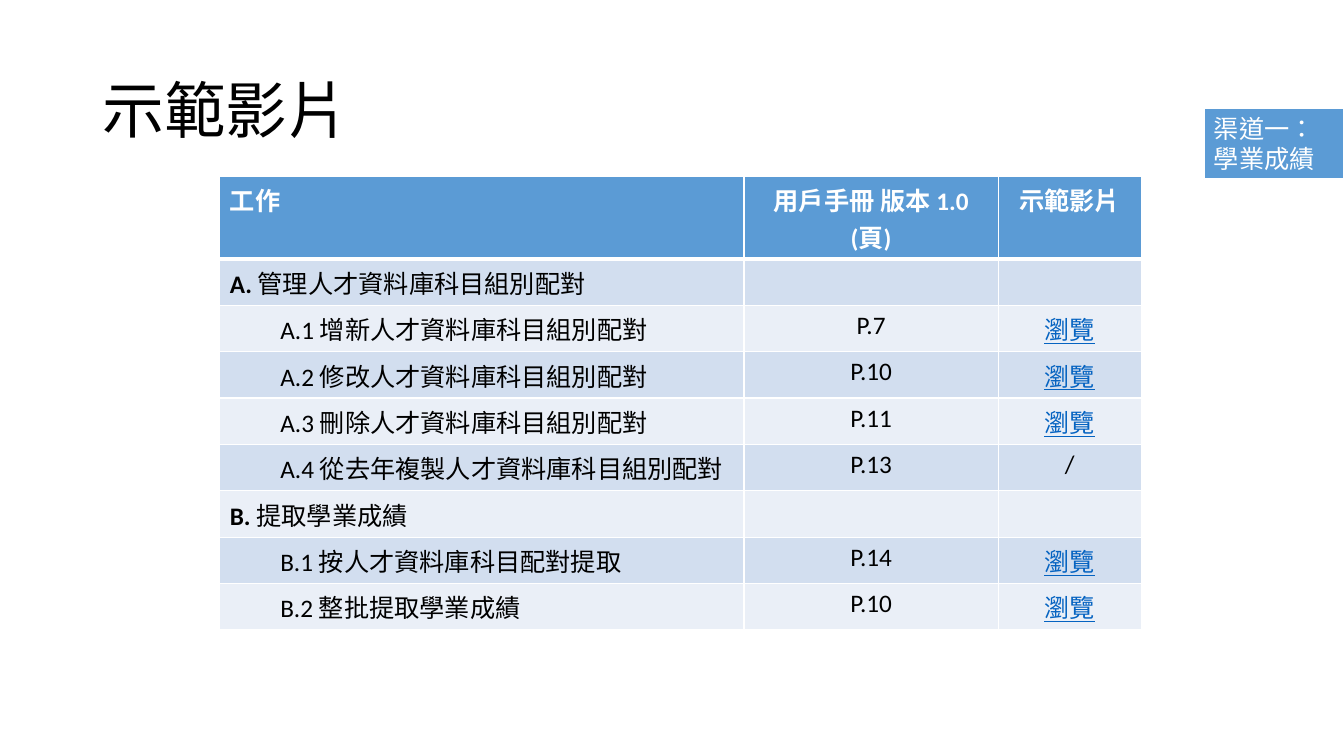
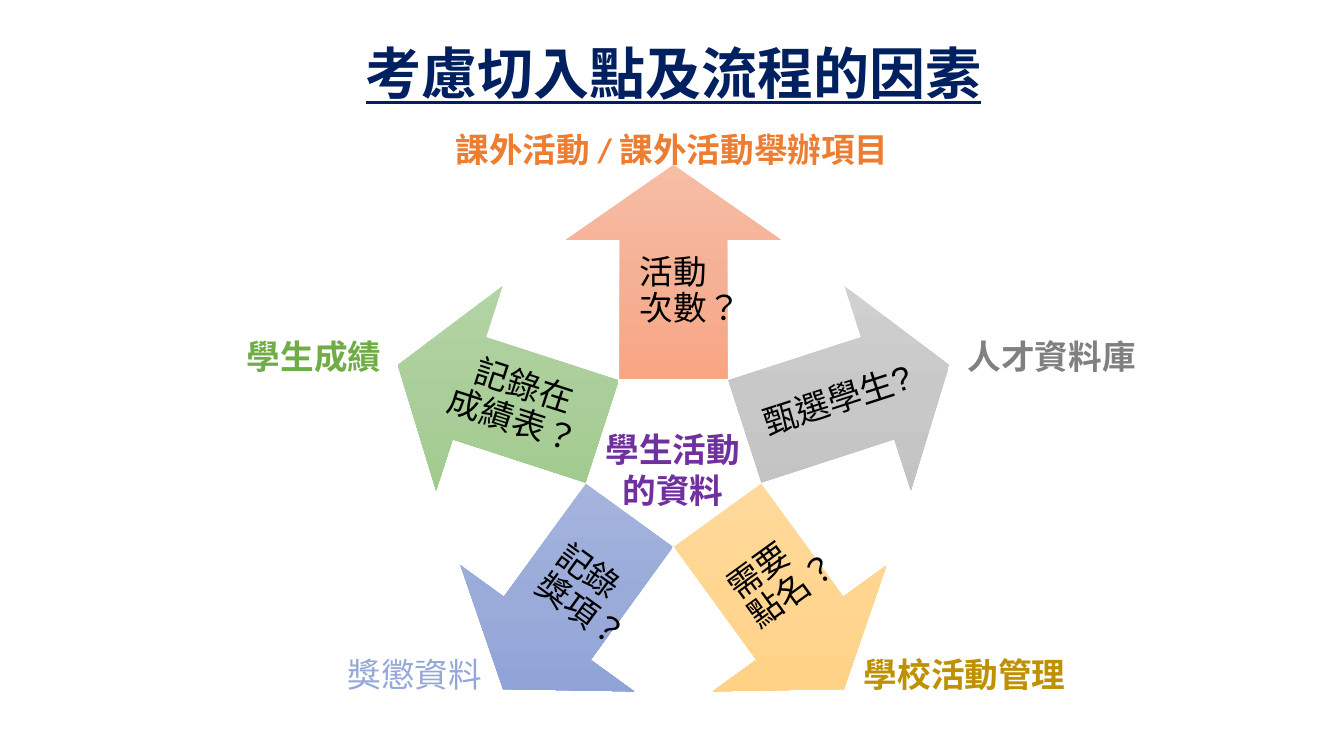
from math import cos, radians, sin

from lxml.etree import SubElement
from pptx import Presentation
from pptx.dml.color import RGBColor
from pptx.enum.lang import MSO_LANGUAGE_ID
from pptx.enum.shapes import MSO_SHAPE
from pptx.enum.text import MSO_ANCHOR, PP_ALIGN
from pptx.oxml.ns import qn
from pptx.util import Inches, Pt

BLUE = RGBColor(0x5B, 0x9B, 0xD5)
BAND_DARK = RGBColor(0xD2, 0xDE, 0xEF)
BAND_LIGHT = RGBColor(0xEA, 0xEF, 0xF7)
LINK = RGBColor(0x05, 0x63, 0xC1)
NAVY = RGBColor(0x00, 0x20, 0x60)
PURPLE = RGBColor(0x70, 0x30, 0xA0)
ORANGE = RGBColor(0xED, 0x7D, 0x31)
GRAY = RGBColor(0x80, 0x80, 0x80)
GOLD = RGBColor(0xBF, 0x90, 0x00)
PERIWINKLE = RGBColor(0x95, 0xA8, 0xD9)
GREEN = RGBColor(0x70, 0xAD, 0x47)
BLACK = RGBColor(0, 0, 0)
WHITE = RGBColor(0xFF, 0xFF, 0xFF)


def set_text(tf, text, size, color=BLACK, bold=False, align=PP_ALIGN.LEFT,
             name="Calibri", underline=False, spacing=None):
    tf.word_wrap = True
    tf.text = text
    for p in tf.paragraphs:
        p.alignment = align
        p.line_spacing = spacing
        for r in p.runs:
            r.font.size = Pt(size)
            r.font.name = name
            r.font.bold = bold
            r.font.underline = underline
            r.font.color.rgb = color
            r.font.language_id = MSO_LANGUAGE_ID.TRADITIONAL_CHINESE


def add_text(s, left, top, width, height, text, size, anchor=MSO_ANCHOR.TOP, **style):
    sp = s.shapes.add_textbox(Inches(left), Inches(top), Inches(width), Inches(height))
    sp.text_frame.vertical_anchor = anchor
    set_text(sp.text_frame, text, size, **style)
    return sp


prs = Presentation()
prs.slide_width = Inches(13.33)
prs.slide_height = Inches(7.5)
blank = prs.slide_layouts[6]

# Slide 1: demonstration videos
s = prs.slides.add_slide(blank)
add_text(s, 0.92, 0.4, 11.5, 1.45, "示範影片", 44, MSO_ANCHOR.MIDDLE, spacing=0.9)

HEADER_HEIGHT, ROW_HEIGHT = 0.82, 0.46
rows = [
    ("工作", "用戶手冊 版本 1.0\n(頁)", "示範影片"),
    ("A. 管理人才資料庫科目組別配對", "", ""),
    ("A.1 增新人才資料庫科目組別配對", "P.7", "瀏覽"),
    ("A.2 修改人才資料庫科目組別配對", "P.10", "瀏覽"),
    ("A.3 刪除人才資料庫科目組別配對", "P.11", "瀏覽"),
    ("A.4 從去年複製人才資料庫科目組別配對", "P.13", "/"),
    ("B. 提取學業成績", "", ""),
    ("B.1 按人才資料庫科目配對提取", "P.14", "瀏覽"),
    ("B.2 整批提取學業成績", "P.10", "瀏覽"),
]
table = s.shapes.add_table(len(rows), 3, Inches(2.18), Inches(1.75), Inches(9.14),
                           Inches(HEADER_HEIGHT + ROW_HEIGHT * (len(rows) - 1))).table
for col, width in zip(table.columns, (5.2, 2.52, 1.42)):
    col.width = Inches(width)

for i, row in enumerate(rows):
    header = i == 0
    table.rows[i].height = Inches(HEADER_HEIGHT if header else ROW_HEIGHT)
    for j, text in enumerate(row):
        cell = table.cell(i, j)
        cell.fill.solid()
        cell.fill.fore_color.rgb = BLUE if header else BAND_DARK if i % 2 else BAND_LIGHT
        link = text == "瀏覽"
        set_text(cell.text_frame, text, 18, bold=header, underline=link,
                 color=WHITE if header else LINK if link else BLACK,
                 align=PP_ALIGN.CENTER if j else PP_ALIGN.LEFT)

        # White borders, heavier under the header
        tc_pr = cell._tc.get_or_add_tcPr()
        for k, tag in enumerate(("a:lnL", "a:lnR", "a:lnT", "a:lnB")):
            heavy = (i, tag) in ((0, "a:lnB"), (1, "a:lnT"))
            ln = tc_pr.makeelement(qn(tag), {"w": str(Pt(3 if heavy else 1))})
            SubElement(SubElement(ln, qn("a:solidFill")), qn("a:srgbClr"), val=str(WHITE))
            tc_pr.insert(k, ln)

    # Section rows get a bold letter, task rows an indent
    tf = table.cell(i, 0).text_frame
    if row[1] == "":
        letter, heading = row[0].split(" ")
        set_text(tf, letter + " ", 18, bold=True)
        r = tf.paragraphs[0].add_run()
        r.text = heading
        r.font.size = Pt(18)
        r.font.name = "Calibri"
        r.font.color.rgb = BLACK
        r.font.language_id = MSO_LANGUAGE_ID.TRADITIONAL_CHINESE
    elif not header:
        p = tf.paragraphs[0]
        p.level = 1
        p._p.get_or_add_pPr().set("marL", str(Inches(0.5)))

# Channel tag at the right edge
sp = s.shapes.add_shape(MSO_SHAPE.RECTANGLE, Inches(11.94), Inches(1.07),
                        Inches(1.39), Inches(0.71))
sp.shadow.inherit = False
sp.fill.solid()
sp.fill.fore_color.rgb = BLUE
sp.line.color.rgb = WHITE
sp.line.width = Pt(1.5)
set_text(sp.text_frame, "渠道一：學業成績", 18, WHITE)

# Slide 2: five arrows around a centre
s = prs.slides.add_slide(blank)
add_text(s, 0.93, -0.17, 11.5, 1.85, "考慮切入點及流程的因素", 40, MSO_ANCHOR.MIDDLE,
         color=NAVY, bold=True, align=PP_ALIGN.CENTER, name="Arial",
         underline=True, spacing=0.9)

CX, CY = 6.68, 4.51
ARROW_RADIUS, TEXT_RADIUS = 1.81, 1.62
ARROW = 2.13
# question, font, text rotation, text box size, gradient colours
arrows = [
    ("活動次數？", "Calibri", 0, (1.07, 1.76), ("F7BDA5", "F5B196", "F8A582")),
    ("甄選學生?", "Arial", 342, (1.76, 1.07), ("D2D2D2", "C8C8C8", "C0C0C0")),
    ("需要點名？", "Calibri", 324, (1.07, 1.76), ("FFDB9E", "FFD590", "FFD07C")),
    ("記錄獎項？", "Calibri", 36, (1.07, 1.76), ("A8B7DF", "9AABD9", "889ED7")),
    ("記錄在\n成績表？", "Calibri", 18, (1.76, 1.07), ("B5D5A7", "AACE9A", "9CC987")),
]
for i, (text, name, turn, (w, h), colors) in enumerate(arrows):
    angle = 72 * i
    dx, dy = sin(radians(angle)), -cos(radians(angle))
    sp = s.shapes.add_shape(MSO_SHAPE.UP_ARROW,
                            Inches(CX + ARROW_RADIUS * dx - ARROW / 2),
                            Inches(CY + ARROW_RADIUS * dy - ARROW / 2),
                            Inches(ARROW), Inches(ARROW))
    sp.rotation = angle
    sp.adjustments[0] = 0.5
    sp.adjustments[1] = 0.35
    sp.shadow.inherit = False
    sp.line.fill.background()

    # Three-stop gradient that stays vertical when the arrow turns
    sp.fill.gradient()
    grad = sp._element.spPr.find(qn("a:gradFill"))
    grad.set("rotWithShape", "0")
    for child in list(grad):
        grad.remove(child)
    stops = SubElement(grad, qn("a:gsLst"))
    for pos, color in zip((0, 50000, 100000), colors):
        SubElement(SubElement(stops, qn("a:gs"), pos=str(pos)), qn("a:srgbClr"), val=color)
    SubElement(grad, qn("a:lin"), ang="5400000", scaled="0")

    sp = add_text(s, CX + TEXT_RADIUS * dx - w / 2, CY + TEXT_RADIUS * dy - h / 2, w, h,
                  text, 24, MSO_ANCHOR.MIDDLE, align=PP_ALIGN.CENTER, name=name, spacing=0.9)
    sp.rotation = turn
    tf = sp.text_frame
    tf.margin_left = tf.margin_right = tf.margin_top = tf.margin_bottom = Inches(0.19)

# Labels at the arrow tips
labels = [
    (9.5, 3.28, 1.95, "人才資料庫", GRAY, True),
    (8.47, 6.44, 2.3, "學校活動管理", GOLD, True),
    (4.42, 1.23, 4.52, "課外活動 / 課外活動舉辦項目", ORANGE, True),
    (3.35, 6.44, 1.62, "獎懲資料", PERIWINKLE, False),
    (2.35, 3.28, 1.62, "學生成績", GREEN, True),
]
for left, top, width, text, color, bold in labels:
    add_text(s, left, top, width, 0.5, text, 24, color=color, bold=bold)

# Centre
add_text(s, 5.9, 4.21, 1.55, 0.91, "學生活動\n的資料", 24, color=PURPLE, bold=True,
         align=PP_ALIGN.CENTER, name="Arial")

prs.save("out.pptx")
